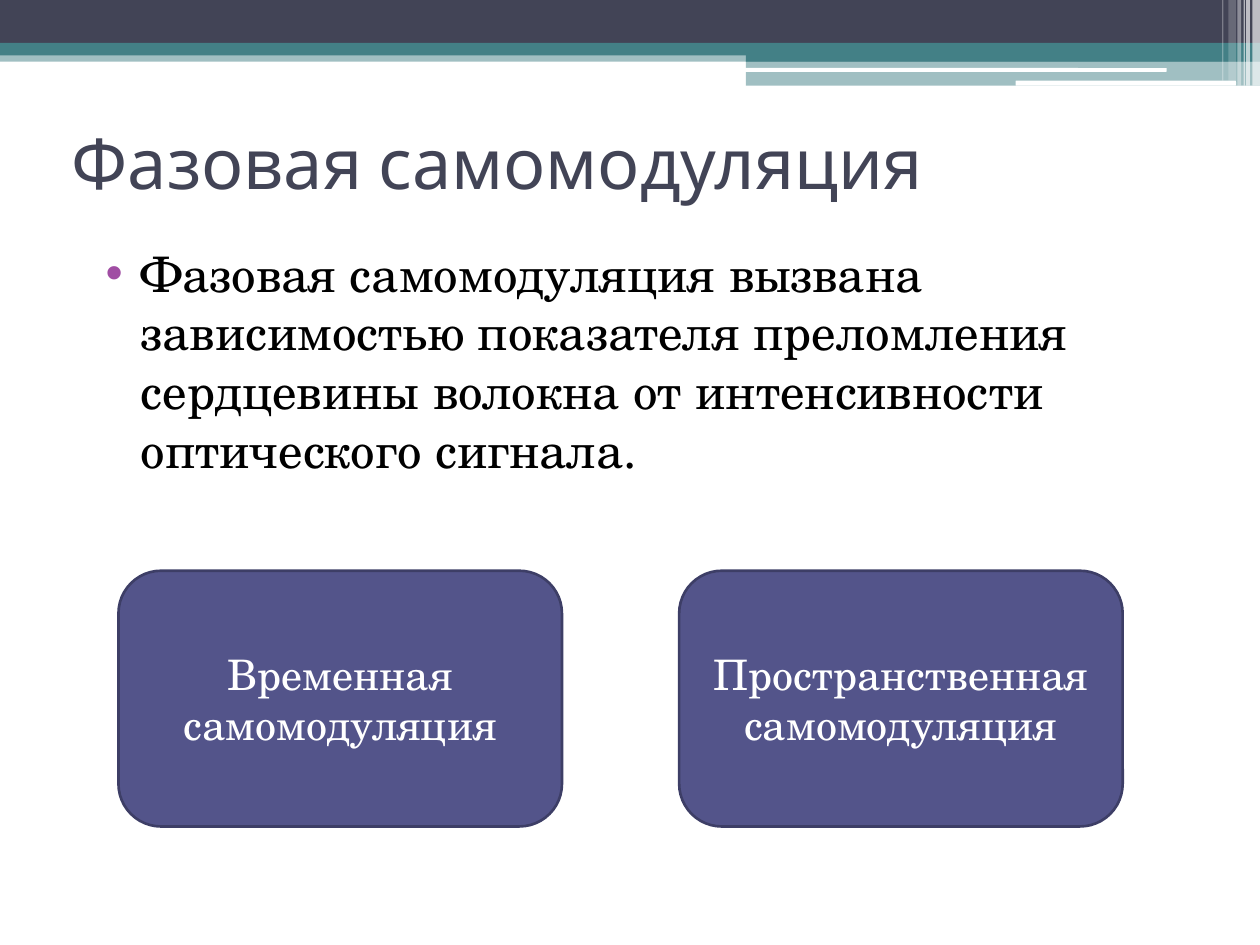
from pptx import Presentation
from pptx.dml.color import RGBColor
from pptx.enum.shapes import MSO_SHAPE as Shape
from pptx.enum.text import MSO_ANCHOR as Anchor, PP_ALIGN as Align
from pptx.oxml.ns import qn
from pptx.util import Inches, Pt
from lxml.etree import SubElement

COLORS = {
    "white": "FFFFFF",
    "black": "000000",
    "slate": "424456",
    "teal": "438086",
    "violet": "53548A",
    "violet_edge": "3D3E66",
    "bullet": "A04DA3",
}
TITLE_FONT = "Karla"
BODY_FONT = "TeX Gyre Schola"


def rgb(name):
    return RGBColor.from_string(COLORS[name])


class SlideBuilder:
    """Holds the current slide and draws its elements in the deck's style."""

    def __init__(self, slide):
        self.slide = slide

    def shape(self, place, color, opacity=100, kind=Shape.RECTANGLE):
        """Draw a plain filled shape; opacity is a percentage."""
        shape = self.slide.shapes.add_shape(kind, *map(Inches, place))
        shape.shadow.inherit = False
        shape.fill.solid()
        shape.fill.fore_color.rgb = rgb(color)
        shape.line.fill.background()
        if opacity < 100:
            fill_color = shape.element.spPr.find(qn("a:solidFill"))[0]
            SubElement(fill_color, qn("a:alpha"), val=str(opacity * 1000))
        return shape

    def set_text(self, frame, text, font, size, color, anchor=Anchor.MIDDLE):
        frame.word_wrap = True
        frame.vertical_anchor = anchor
        frame.text = text
        para = frame.paragraphs[0]
        span = para.runs[0]
        span.font.name = font
        span.font.size = Pt(size)
        span.font.color.rgb = rgb(color)
        return para

    def text(self, place, *style, **options):
        box = self.slide.shapes.add_textbox(*map(Inches, place))
        return self.set_text(box.text_frame, *style, **options)

    def bullet(self, place, text):
        para = self.text(place, text, BODY_FONT, 28, "black", anchor=Anchor.TOP)
        para.space_before = Pt(3)
        properties = para._p.get_or_add_pPr()
        properties.set("marL", str(Inches(0.4)))
        properties.set("indent", str(Inches(-0.28)))
        bullet_color = SubElement(properties, qn("a:buClr"))
        SubElement(bullet_color, qn("a:srgbClr"), val=COLORS["bullet"])
        SubElement(properties, qn("a:buFont"), typeface="Arial")
        SubElement(properties, qn("a:buChar"), char="•")

    def card(self, place, text):
        card = self.shape(place, "violet", kind=Shape.ROUNDED_RECTANGLE)
        card.line.color.rgb = rgb("violet_edge")
        card.line.width = Pt(1.5)
        para = self.set_text(card.text_frame, text, BODY_FONT, 24, "white")
        para.alignment = Align.CENTER

    def header(self):
        """Draw the banded top edge with its light slots and right-hand stripes."""
        for place, color, opacity in (
            ((0, 0.4, 10, 0.09), "teal", 50),
            ((0, 0, 10, 0.34), "slate", 100),
            ((0, 0.34, 10, 0.1), "teal", 100),
            ((5.92, 0.39, 4.08, 0.1), "teal", 100),
            ((5.92, 0.48, 4.08, 0.2), "teal", 50),
        ):
            self.shape(place, color, opacity)

        for place in ((5.91, 0.54, 3.35, 0.03), (8.06, 0.64, 1.75, 0.04)):
            self.shape(place, "white", kind=Shape.ROUNDED_RECTANGLE)

        for left, width, height, opacity in (
            (9.94, 0.06, 0.68, 65),
            (9.89, 0.03, 0.68, 65),
            (9.87, 0.01, 0.68, 60),
            (9.82, 0.03, 0.68, 40),
            (9.75, 0.06, 0.64, 20),
            (9.7, 0.01, 0.64, 30),
        ):
            self.shape((left, 0, width, height), "white", opacity)


def main():
    deck = Presentation()
    deck.slide_width, deck.slide_height = Inches(10), Inches(7.5)
    builder = SlideBuilder(deck.slides.add_slide(deck.slide_layouts[6]))

    builder.header()
    builder.text((0.47, 0.7, 9, 1.17), "Фазовая самомодуляция", TITLE_FONT, 40, "slate")
    builder.bullet(
        (0.62, 1.88, 9, 4.73),
        "Фазовая самомодуляция вызвана зависимостью показателя преломления "
        "сердцевины волокна от интенсивности оптического сигнала.",
    )
    kinds = ("Временная самомодуляция", "Пространственная самомодуляция")
    for index, kind in enumerate(kinds):
        builder.card((0.94 + 4.45 * index, 4.53, 3.52, 2.03), kind)

    deck.save("out.pptx")


if __name__ == "__main__":
    main()
